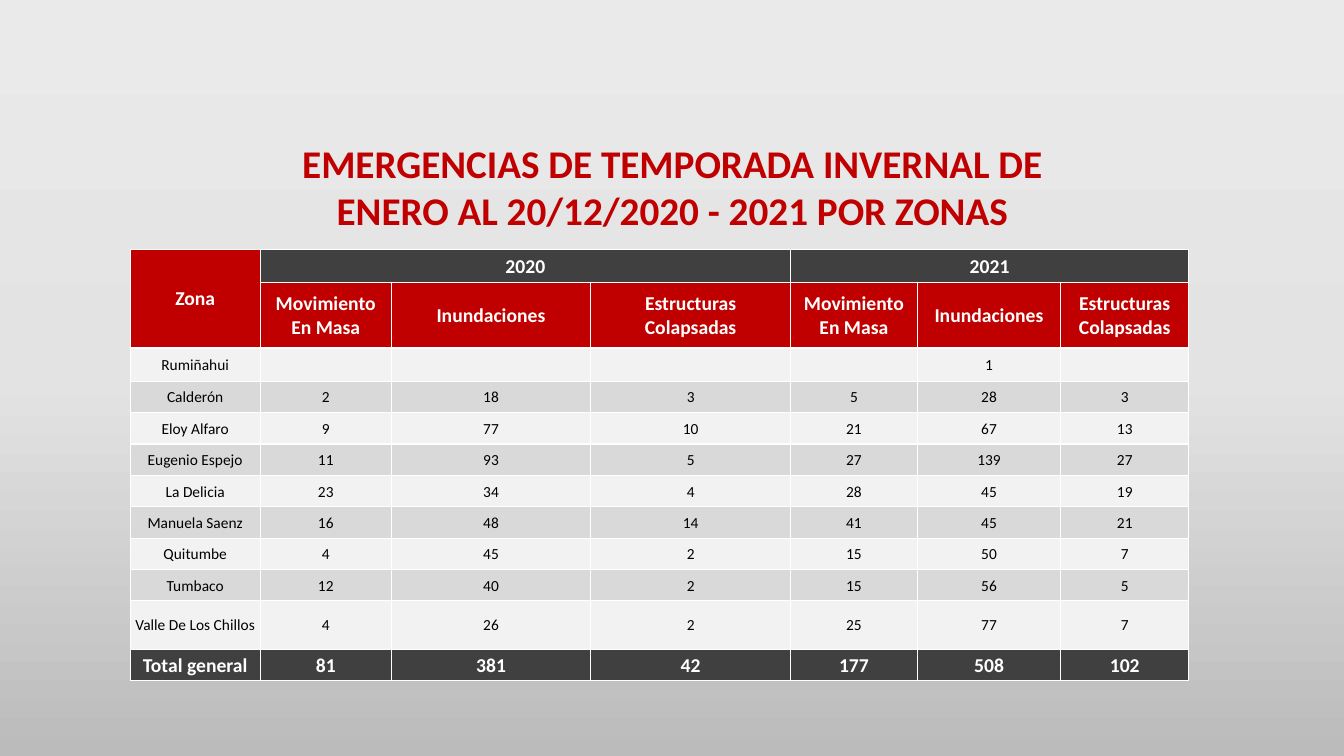
from copy import deepcopy

from lxml.etree import SubElement
from pptx import Presentation
from pptx.dml.color import RGBColor
from pptx.enum.text import MSO_ANCHOR, PP_ALIGN
from pptx.oxml.ns import qn
from pptx.util import Cm, Pt

RED, DARK, WHITE, BLACK = "C00000", "404040", "FFFFFF", "000000"
BANDS = ("F2F2F2", "D9D9D9")
BACKGROUND = ((0, "EBEAEA"), (0.5, "E4E3E3"), (1, "BCBBBB"))

TITLE = "EMERGENCIAS DE TEMPORADA INVERNAL DE ENERO AL 20/12/2020 - 2021 POR ZONAS"
YEARS = {1: "2020", 4: "2021"}
KINDS = ("Movimiento\nEn Masa", "Inundaciones", "Estructuras\nColapsadas",
         "Movimiento\nEn Masa", "Inundaciones", "Estructuras Colapsadas")
ZONES = (
    ("Rumiñahui", "", "", "", "", 1, ""),
    ("Calderón", 2, 18, 3, 5, 28, 3),
    ("Eloy Alfaro", 9, 77, 10, 21, 67, 13),
    ("Eugenio Espejo", 11, 93, 5, 27, 139, 27),
    ("La Delicia", 23, 34, 4, 28, 45, 19),
    ("Manuela Saenz", 16, 48, 14, 41, 45, 21),
    ("Quitumbe", 4, 45, 2, 15, 50, 7),
    ("Tumbaco", 12, 40, 2, 15, 56, 5),
    ("Valle De Los Chillos", 4, 26, 2, 25, 77, 7),
)
TOTALS = ("Total general", 81, 381, 42, 177, 508, 102)
COLUMN_WIDTHS = (3.28, 3.3, 5.03, 5.03, 3.2, 3.61, 3.23)
ROW_HEIGHTS = (0.83, 1.66, 0.84, *[0.79] * 7, 1.22, 0.79)


def color(value):
    return RGBColor.from_string(value)


def write(frame, text, size, ink, bold=False):
    """Fill a text frame with one centred paragraph per line of text."""
    frame.word_wrap = True
    for index, line in enumerate(text.split("\n")):
        para = frame.add_paragraph() if index else frame.paragraphs[0]
        para.alignment = PP_ALIGN.CENTER
        if not line:
            # An empty cell needs its own text size, or its row grows.
            SubElement(para._p, qn("a:endParaRPr"), sz=str(size * 100))
            continue
        span = para.add_run()
        span.text = line
        span.font.name = "Calibri"
        span.font.size = Pt(size)
        span.font.bold = bold
        span.font.color.rgb = color(ink)


def paint_background(page):
    fill = page.background.fill
    fill.gradient()
    fill.gradient_angle = 270
    stop_list = page.element.find(".//" + qn("a:gsLst"))
    stop_list.insert(1, deepcopy(stop_list[0]))
    for stop, (position, shade) in zip(fill.gradient_stops, BACKGROUND):
        stop.position = position
        stop.color.rgb = color(shade)


def add_title(page):
    box = page.shapes.add_textbox(Cm(6.5), Cm(3.38), Cm(20.88), Cm(2.64))
    write(box.text_frame, TITLE, 28, RED, bold=True)


def add_borders(cell):
    properties = cell._tc.get_or_add_tcPr()
    for side in ("a:lnL", "a:lnR", "a:lnT", "a:lnB"):
        line = SubElement(properties, qn(side), w=str(Pt(1)))
        fill = SubElement(line, qn("a:solidFill"))
        SubElement(fill, qn("a:srgbClr"), val=WHITE)


def paint_cell(cell, shade):
    add_borders(cell)
    cell.fill.solid()
    cell.fill.fore_color.rgb = color(shade)
    cell.vertical_anchor = MSO_ANCHOR.MIDDLE
    cell.margin_left = cell.margin_right = cell.margin_top = Cm(0.03)
    cell.margin_bottom = 0


def fill_row(table, row, values, shade, **text_format):
    for column, value in enumerate(values):
        cell = table.cell(row, column)
        paint_cell(cell, shade)
        write(cell.text_frame, str(value), **text_format)


def add_zone_table(page):
    table = page.shapes.add_table(
        len(ROW_HEIGHTS), len(COLUMN_WIDTHS), Cm(3.28), Cm(6.28),
        Cm(sum(COLUMN_WIDTHS)), Cm(sum(ROW_HEIGHTS))).table
    table.first_row = table.horz_banding = False
    for column, width in zip(table.columns, COLUMN_WIDTHS):
        column.width = Cm(width)
    for row, height in zip(table.rows, ROW_HEIGHTS):
        row.height = Cm(height)

    strong = dict(size=14, ink=WHITE, bold=True)
    years = [YEARS.get(column, "") for column in range(1, len(COLUMN_WIDTHS))]
    fill_row(table, 0, ["Zona", *years], DARK, **strong)
    fill_row(table, 1, ["", *KINDS], RED, **strong)
    table.cell(0, 0).fill.fore_color.rgb = color(RED)
    table.cell(0, 0).merge(table.cell(1, 0))
    for column in YEARS:
        table.cell(0, column).merge(table.cell(0, column + 2))

    for index, zone in enumerate(ZONES):
        fill_row(table, index + 2, zone, BANDS[index % 2], size=11, ink=BLACK)
    fill_row(table, len(ROW_HEIGHTS) - 1, TOTALS, DARK, **strong)


def main():
    deck = Presentation()
    deck.slide_width, deck.slide_height = Cm(33.87), Cm(19.05)
    page = deck.slides.add_slide(deck.slide_layouts[6])
    paint_background(page)
    add_title(page)
    add_zone_table(page)
    deck.save("out.pptx")


if __name__ == "__main__":
    main()
